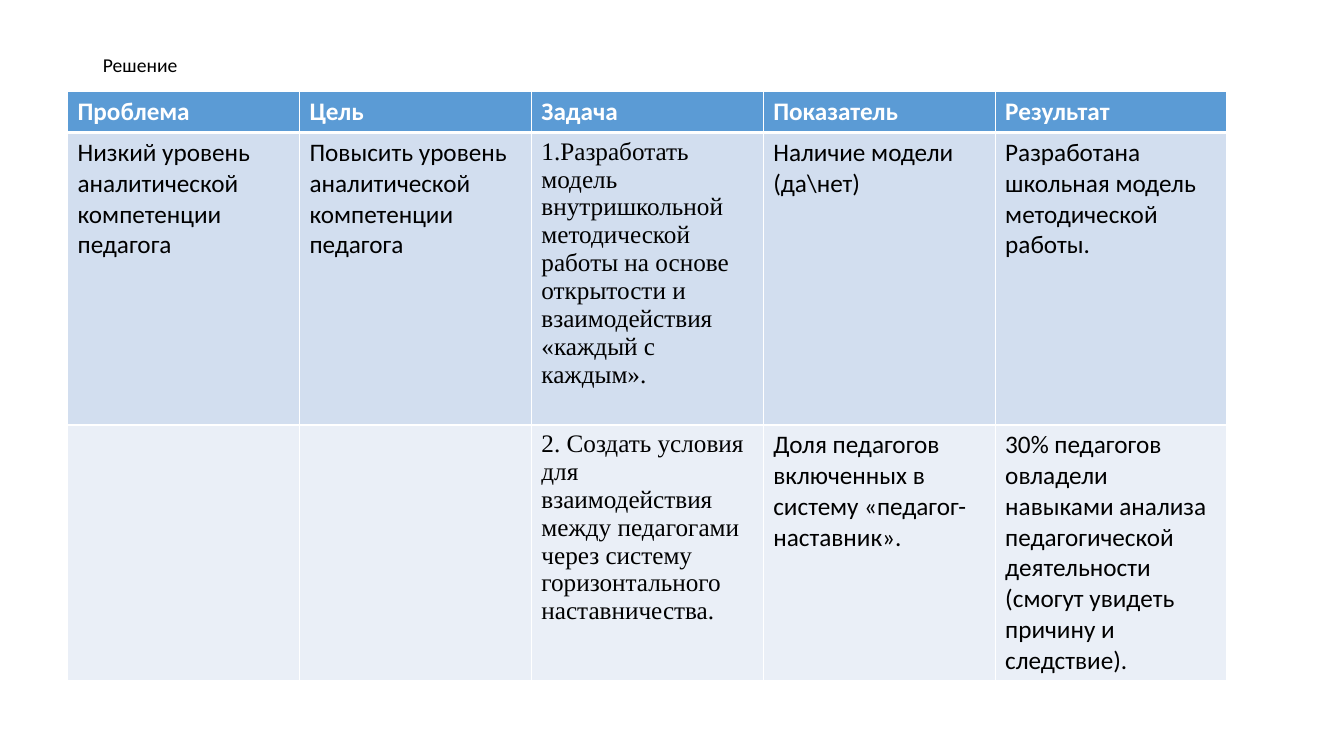
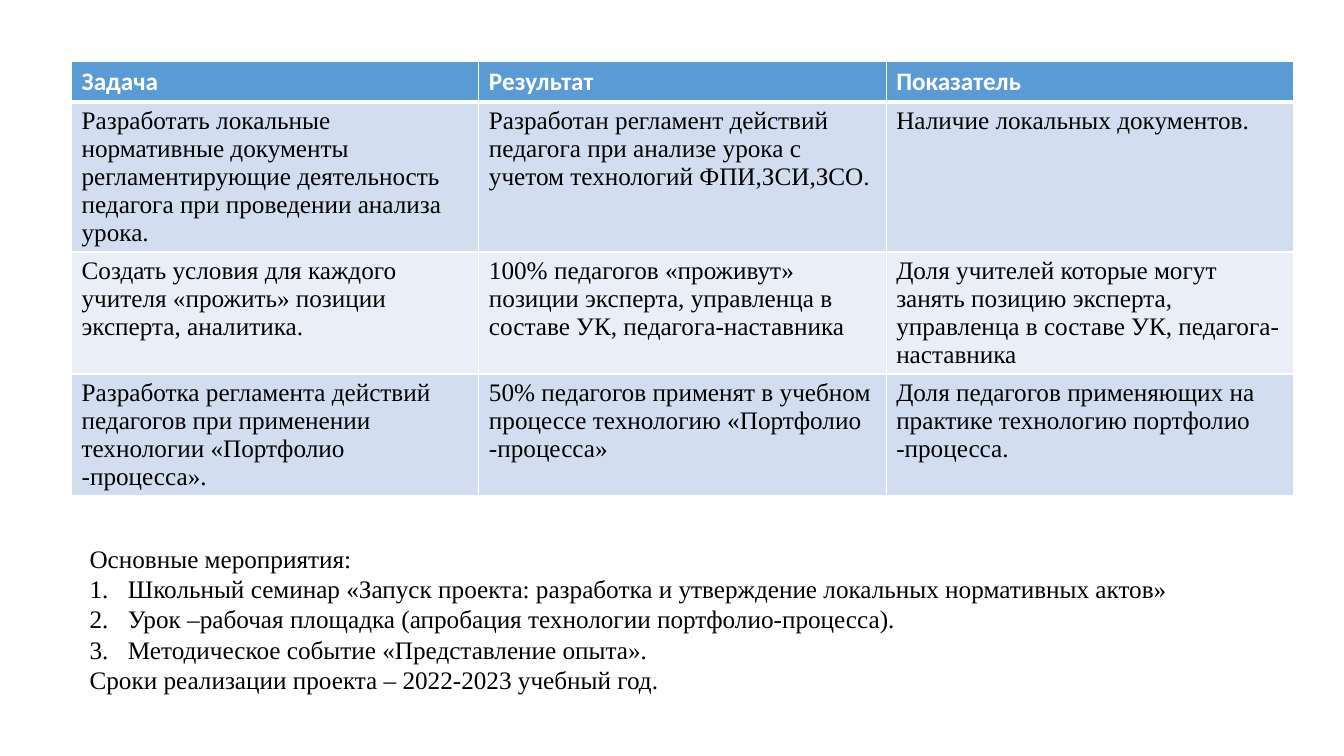
"""Build two slides of project tables: problems and goals, then tasks and events."""
from lxml import etree
from pptx import Presentation
from pptx.dml.color import RGBColor
from pptx.enum import text
from pptx.oxml import ns
from pptx.util import Inches, Pt

BLACK = RGBColor(0x00, 0x00, 0x00)
WHITE = RGBColor(0xFF, 0xFF, 0xFF)
HEADER_BLUE = RGBColor(0x5B, 0x9B, 0xD5)
BANDS = (RGBColor(0xD2, 0xDE, 0xEF), RGBColor(0xEA, 0xEF, 0xF7))
SANS = "Calibri"
SERIF = "Times New Roman"
TITLE_ONLY, BLANK = 5, 6
HEADER_HEIGHT = 0.4

GOALS = [
    ["Проблема", "Цель", "Задача", "Показатель", "Результат"],
    ["Низкий уровень аналитической компетенции педагога",
     "Повысить уровень аналитической компетенции педагога",
     "1.Разработать модель внутришкольной методической работы на основе "
     "открытости и взаимодействия «каждый с каждым».",
     "Наличие модели (да\\нет)",
     "Разработана школьная модель методической работы."],
    ["", "",
     "2. Создать условия для взаимодействия между педагогами через систему "
     "горизонтального наставничества.",
     "Доля педагогов включенных в систему «педагог-наставник».",
     "30% педагогов овладели навыками анализа педагогической деятельности "
     "(смогут увидеть причину и следствие)."],
]
TASKS = [
    ["Задача", "Результат", "Показатель"],
    ["Разработать локальные нормативные документы регламентирующие "
     "деятельность педагога при проведении анализа урока.",
     "Разработан регламент действий педагога при анализе урока с учетом "
     "технологий ФПИ,ЗСИ,ЗСО.",
     "Наличие локальных документов."],
    ["Создать условия для каждого учителя «прожить» позиции эксперта, аналитика.",
     "100% педагогов «проживут» позиции эксперта, управленца в составе УК, "
     "педагога-наставника",
     "Доля учителей которые могут занять позицию эксперта, управленца в "
     "составе УК, педагога-наставника"],
    ["Разработка регламента действий педагогов при применении технологии "
     "«Портфолио -процесса».",
     "50% педагогов применят в учебном процессе технологию «Портфолио -процесса»",
     "Доля педагогов применяющих на практике технологию портфолио -процесса."],
]
EVENTS = [
    "Школьный семинар «Запуск проекта: разработка и утверждение локальных "
    "нормативных актов»",
    "Урок –рабочая площадка (апробация технологии портфолио-процесса).",
    "Методическое событие «Представление опыта».",
]


def set_font(paragraph, name, size=18, color=BLACK, bold=False):
    """Give a whole paragraph one font."""
    font = paragraph.font
    font.name, font.size, font.bold = name, Pt(size), bold
    font.color.rgb = color


def add_title(slide, wording):
    """Fill and place the title placeholder."""
    title = slide.shapes.title
    title.left, title.top = Inches(0.92), Inches(0.4)
    title.width, title.height = Inches(11.5), Inches(0.51)
    frame = title.text_frame
    frame.text = wording
    frame.vertical_anchor = text.MSO_ANCHOR.MIDDLE
    paragraph = frame.paragraphs[0]
    paragraph.alignment = text.PP_ALIGN.LEFT
    paragraph.line_spacing = 0.9
    set_font(paragraph, SANS, 14)


def set_borders(cell, top, bottom):
    """Draw white borders, with the top and bottom widths in points."""
    properties = cell._tc.get_or_add_tcPr()
    for side, width in (("L", 1), ("R", 1), ("T", top), ("B", bottom)):
        line = etree.SubElement(properties, ns.qn(f"a:ln{side}"), w=str(Pt(width)))
        fill = etree.SubElement(line, ns.qn("a:solidFill"))
        etree.SubElement(fill, ns.qn("a:srgbClr"), val=str(WHITE))


def add_banded_table(slide, rows, left, top, width, body_heights, body_fonts):
    """Add a table with a blue header and alternating body bands."""
    heights = [HEADER_HEIGHT, *body_heights]
    table = slide.shapes.add_table(
        len(rows), len(rows[0]), Inches(left), Inches(top),
        Inches(width), Inches(sum(heights))).table
    for r, (wordings, height) in enumerate(zip(rows, heights)):
        table.rows[r].height = Inches(height)
        is_header = r == 0
        for c, wording in enumerate(wordings):
            cell = table.cell(r, c)
            cell.text = wording
            set_borders(cell, 3 if r == 1 else 1, 3 if is_header else 1)
            cell.fill.solid()
            cell.fill.fore_color.rgb = HEADER_BLUE if is_header else BANDS[(r - 1) % 2]
            set_font(cell.text_frame.paragraphs[0],
                     SANS if is_header else body_fonts[c],
                     color=WHITE if is_header else BLACK, bold=is_header)


def hang(paragraph, numbered):
    """Give a paragraph a hanging indent, numbered or plain."""
    properties = paragraph._p.get_or_add_pPr()
    indent = Inches(0.38)
    properties.set("marL", str(indent))
    properties.set("indent", str(-indent))
    if numbered:
        etree.SubElement(properties, ns.qn("a:buAutoNum"), type="arabicPeriod")


def add_events(slide, heading, events, schedule):
    """Add the numbered events between their heading and the schedule."""
    frame = slide.shapes.add_textbox(
        Inches(0.79), Inches(5.34), Inches(11.96), Inches(1.92)).text_frame
    frame.word_wrap = True
    frame.text = "\n".join([heading, *events, schedule])
    for paragraph in frame.paragraphs[1:]:
        hang(paragraph, numbered=paragraph.text in events)
    for paragraph in frame.paragraphs:
        set_font(paragraph, SERIF)


def main():
    """Build and save the presentation."""
    deck = Presentation()
    deck.slide_width, deck.slide_height = Inches(13.33), Inches(7.5)

    solution = deck.slides.add_slide(deck.slide_layouts[TITLE_ONLY])
    add_title(solution, "Решение")
    add_banded_table(solution, GOALS, 0.67, 0.91, 11.5, [2.9, 2.54],
                     [SANS, SANS, SERIF, SANS, SANS])

    plan = deck.slides.add_slide(deck.slide_layouts[BLANK])
    add_banded_table(plan, TASKS, 0.71, 0.61, 12.12, [1.48, 1.21, 1.21], [SERIF] * 3)
    add_events(plan, "Основные мероприятия:", EVENTS,
               "Сроки реализации проекта – 2022-2023 учебный год.")

    deck.save("out.pptx")


if __name__ == "__main__":
    main()
